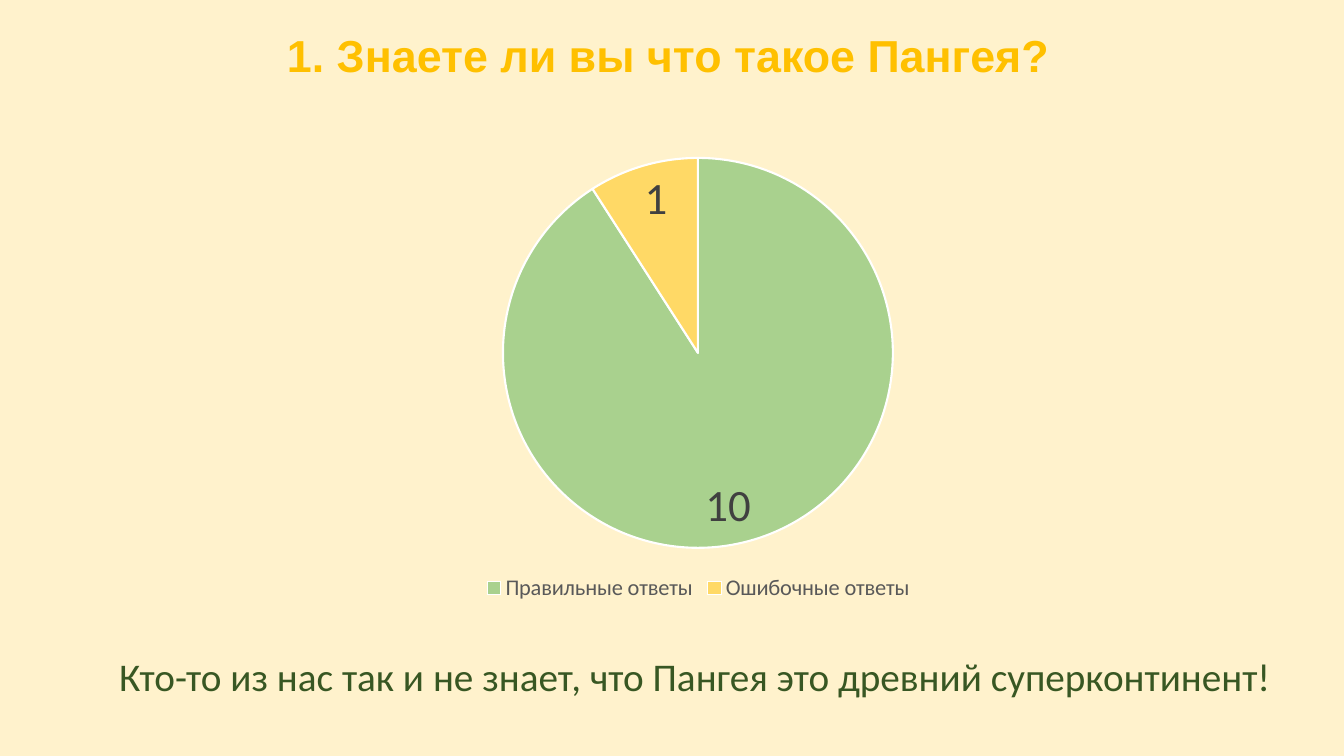
from dataclasses import dataclass
from lxml import etree
from pptx import Presentation
from pptx.chart.data import CategoryChartData
from pptx.dml.color import RGBColor
from pptx.enum.chart import XL_CHART_TYPE, XL_LABEL_POSITION, XL_LEGEND_POSITION
from pptx.enum.text import MSO_ANCHOR, PP_ALIGN
from pptx.oxml.ns import qn
from pptx.util import Emu, Pt

PIE = XL_CHART_TYPE.PIE
INSIDE = XL_LABEL_POSITION.INSIDE_END
BOTTOM = XL_LEGEND_POSITION.BOTTOM
CENTER = PP_ALIGN.CENTER
TOP = MSO_ANCHOR.TOP

CREAM = RGBColor(0xFF, 0xF2, 0xCC)
AMBER = RGBColor(0xFF, 0xC0, 0x00)
FOREST = RGBColor(0x38, 0x57, 0x23)
GREEN = RGBColor(0xA9, 0xD1, 0x8E)
YELLOW = RGBColor(0xFF, 0xD9, 0x66)
WHITE = RGBColor(0xFF, 0xFF, 0xFF)
DARK = RGBColor(0x40, 0x40, 0x40)
GREY = RGBColor(0x59, 0x59, 0x59)
SCALE = 914400 / 100.8  # EMU in one px


@dataclass
class Box:
    left: int
    top: int
    width: int
    height: int

    def emu(self) -> list[Emu]:
        return [px(n) for n in (self.left, self.top, self.width, self.height)]


@dataclass
class Style:
    font: str
    size: int
    color: RGBColor
    bold: bool = False


@dataclass
class Slice:
    name: str
    value: int
    color: RGBColor


def px(count: int) -> Emu:
    return Emu(round(count * SCALE))


def set_font(font, style: Style) -> None:
    font.name = style.font
    font.size = Pt(style.size)
    font.bold = style.bold
    font.color.rgb = style.color


def write(shape, box: Box, text: str, style: Style, wrap: bool) -> None:
    shape.left, shape.top, shape.width, shape.height = box.emu()
    frame = shape.text_frame
    frame.word_wrap = wrap
    frame.vertical_anchor = TOP
    line = frame.paragraphs[0]
    line.alignment = CENTER
    line.line_spacing = 1.0
    run = line.add_run()
    run.text = text
    set_font(run.font, style)


def set_plot(chart, frame: Box, plot: Box) -> None:
    """Fix the inner plot area as fractions of the chart frame."""
    area = chart.plots[0]._element.getparent()
    layout = area.find(qn("c:layout"))
    if layout is None:
        layout = etree.Element(qn("c:layout"))
        area.insert(0, layout)
    manual = etree.SubElement(layout, qn("c:manualLayout"))
    parts = {
        "layoutTarget": "inner", "xMode": "edge", "yMode": "edge",
        "x": round((plot.left - frame.left) / frame.width, 4),
        "y": round((plot.top - frame.top) / frame.height, 4),
        "w": round(plot.width / frame.width, 4),
        "h": round(plot.height / frame.height, 4),
    }
    for tag, value in parts.items():
        etree.SubElement(manual, qn(f"c:{tag}")).set("val", str(value))


def add_pie(slide, box: Box, plot: Box, slices: list[Slice]) -> None:
    data = CategoryChartData()
    data.categories = [part.name for part in slices]
    data.add_series("Ответы", [part.value for part in slices])
    chart = slide.shapes.add_chart(PIE, *box.emu(), data).chart
    chart.has_title = False
    set_font(chart.font, Style("Calibri", 10, GREY))
    set_plot(chart, box, plot)

    # Legend
    chart.has_legend = True
    chart.legend.position = BOTTOM
    chart.legend.include_in_layout = False
    set_font(chart.legend.font, Style("Calibri", 16, GREY))

    # Slices
    pie = chart.plots[0]
    pie.vary_by_categories = True
    series = pie.series[0]
    for i, part in enumerate(slices):
        style = series.points[i].format
        style.fill.solid()
        style.fill.fore_color.rgb = part.color
        style.line.color.rgb = WHITE
        style.line.width = Pt(1.5)

    # Values
    labels = series.data_labels
    labels.show_value = True
    labels.show_percentage = False
    labels.position = INSIDE
    set_font(labels.font, Style("Calibri", 32, DARK))


def main() -> None:
    deck = Presentation()
    deck.slide_width, deck.slide_height = px(1344), px(756)
    slide = deck.slides.add_slide(deck.slide_layouts[5])
    back = slide.background.fill
    back.solid()
    back.fore_color.rgb = CREAM

    # Title
    write(slide.shapes.title, Box(38, 23, 1261, 65),
          "1. Знаете ли вы что такое Пангея?",
          Style("Arial", 32, AMBER, True), True)

    # Pie of answers
    add_pie(slide, Box(345, 88, 707, 518), Box(503, 158, 390, 390), [
        Slice("Правильные ответы", 10, GREEN),
        Slice("Ошибочные ответы", 1, YELLOW),
    ])

    # Closing note
    spot = Box(106, 647, 1177, 57)
    note = slide.shapes.add_textbox(*spot.emu())
    write(note, spot,
          "Кто-то из нас так и не знает, что Пангея это древний суперконтинент!",
          Style("Calibri", 28, FOREST), False)

    deck.save("out.pptx")


if __name__ == "__main__":
    main()
